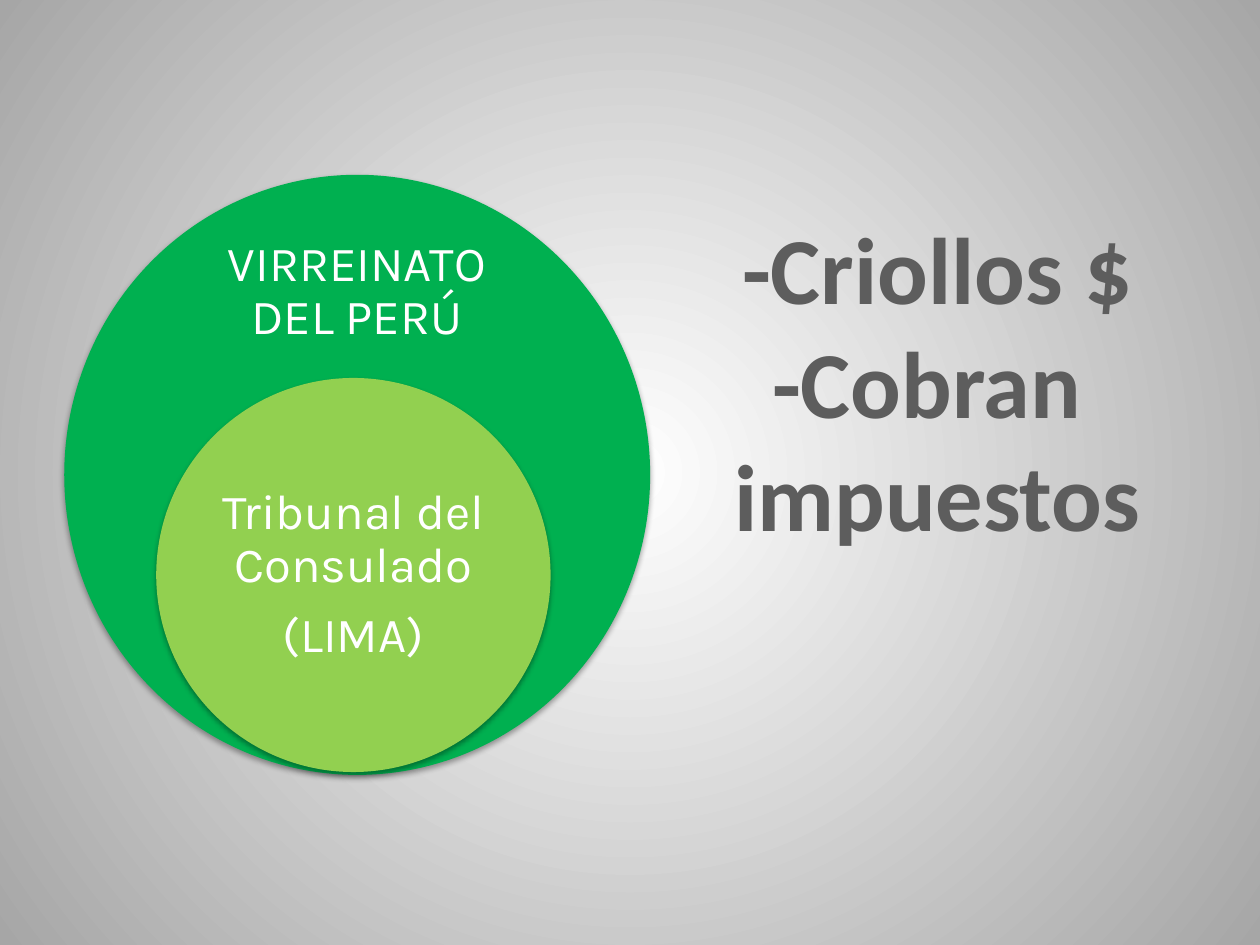
from pptx import Presentation
from pptx.dml.color import RGBColor
from pptx.enum.shapes import MSO_SHAPE
from pptx.enum.text import MSO_ANCHOR, MSO_AUTO_SIZE, PP_ALIGN
from pptx.oxml import parse_xml
from pptx.oxml.ns import nsdecls, qn
from pptx.util import Inches, Pt

COLORS = {
    "center": "FFFFFF",
    "edge": "A6A6A6",
    "viceroyalty": "00B050",
    "tribunal": "92D050",
    "label": "FFFFFF",
    "notes": "5D5D5D",
    "shadow": "000000",
}
WIDTH, HEIGHT = 10, 7.5


def color(name):
    """Return the named colour."""
    return RGBColor.from_string(COLORS[name])


def place(box):
    """Turn shares of the slide size into lengths."""
    left, top, width, height = box
    return (Inches(left * WIDTH), Inches(top * HEIGHT),
            Inches(width * WIDTH), Inches(height * HEIGHT))


def inset(box, shares):
    """Return the part of a box given as shares of its size."""
    left, top, width, height = box
    x, y, across, down = shares
    return left + x * width, top + y * height, across * width, down * height


def paint_background(page):
    """Give the page a round gradient from its centre."""
    background = parse_xml(
        f'<p:bg {nsdecls("p", "a")}><p:bgPr><a:gradFill rotWithShape="1"><a:gsLst>'
        f'<a:gs pos="0"><a:srgbClr val="{COLORS["center"]}"/></a:gs>'
        f'<a:gs pos="100000"><a:srgbClr val="{COLORS["edge"]}"/></a:gs></a:gsLst>'
        '<a:path path="circle"><a:fillToRect l="50000" t="50000" r="50000" b="50000"/>'
        '</a:path></a:gradFill><a:effectLst/></p:bgPr></p:bg>')
    page.element.find(qn("p:cSld")).insert(0, background)


def add_shadow(shape):
    """Drop a soft shadow below a shape."""
    shape.shadow.inherit = False
    effects = shape.element.spPr.find(qn("a:effectLst"))
    effects.append(parse_xml(
        f'<a:outerShdw {nsdecls("a")} blurRad="{Pt(3.1)}" dist="{Pt(1.8)}" dir="5400000" '
        f'rotWithShape="0"><a:srgbClr val="{COLORS["shadow"]}"><a:alpha val="35000"/>'
        '</a:srgbClr></a:outerShdw>'))


def write_lines(frame, lines, font, size, ink, bold=False):
    """Write centred paragraphs in one font and return them."""
    frame.text = "\n".join(lines)
    for para in frame.paragraphs:
        para.alignment = PP_ALIGN.CENTER
        para.font.name = font
        para.font.size = Pt(size)
        para.font.bold = bold
        para.font.color.rgb = color(ink)
    return frame.paragraphs


def draw_circle(page, box, label_shares, lines, fill):
    """Draw a labelled circle of the nested diagram."""
    group = page.shapes.add_group_shape()
    circle = group.shapes.add_shape(MSO_SHAPE.OVAL, *place(box))
    circle.fill.solid()
    circle.fill.fore_color.rgb = color(fill)
    circle.line.fill.background()
    add_shadow(circle)

    label = group.shapes.add_textbox(*place(inset(box, label_shares)))
    frame = label.text_frame
    frame.word_wrap = True
    frame.vertical_anchor = MSO_ANCHOR.MIDDLE
    frame.margin_left = frame.margin_right = 0
    frame.margin_top = frame.margin_bottom = Inches(0.1)
    for para in write_lines(frame, lines, "Karla", 28, "label"):
        para.line_spacing = 0.9
        para.space_after = Pt(10)


def write_notes(page, box, lines):
    """Write the large remarks beside the diagram."""
    frame = page.shapes.add_textbox(*place(box)).text_frame
    frame.word_wrap = False
    frame.auto_size = MSO_AUTO_SIZE.SHAPE_TO_FIT_TEXT
    write_lines(frame, lines, "Calibri", 54, "notes", bold=True)


def main():
    """Build and save the deck."""
    deck = Presentation()
    deck.slide_width, deck.slide_height = Inches(WIDTH), Inches(HEIGHT)
    page = deck.slides.add_slide(deck.slide_layouts[6])
    paint_background(page)
    draw_circle(page, (0.051, 0.185, 0.465, 0.635), (0.237, 0.111, 0.525, 0.17),
                ["VIRREINATO DEL PERÚ"], "viceroyalty")
    draw_circle(page, (0.124, 0.4, 0.313, 0.417), (0.147, 0.25, 0.706, 0.5),
                ["Tribunal del Consulado", "(LIMA)"], "tribunal")
    write_notes(page, (0.568, 0.216, 0.352, 0.377),
                ["-Criollos $", "-Cobran ", "impuestos"])
    deck.save("out.pptx")


if __name__ == "__main__":
    main()
